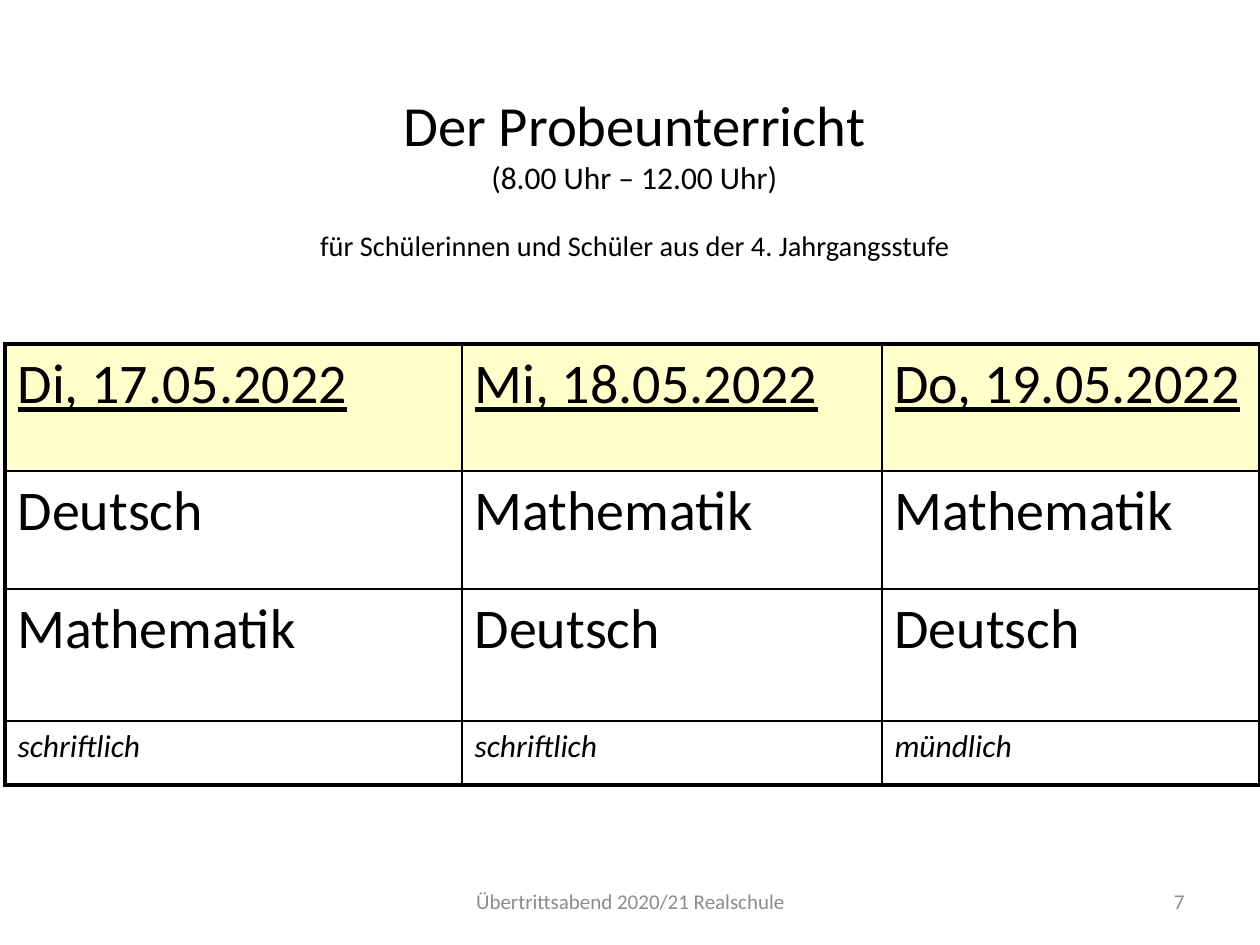
from dataclasses import dataclass

from lxml import etree
from pptx import Presentation
from pptx.dml.color import RGBColor
from pptx.enum.text import MSO_ANCHOR, MSO_AUTO_SIZE, PP_ALIGN
from pptx.oxml.ns import qn
from pptx.util import Pt

MID = MSO_ANCHOR.MIDDLE
FIXED = MSO_AUTO_SIZE.NONE
CENTER = PP_ALIGN.CENTER
RIGHT = PP_ALIGN.RIGHT
FONT = "Calibri"
BLACK, WHITE, CREAM, GRAY = "000000", "FFFFFF", "FFFFCC", "8C8C8C"
THICK, THIN = 2.25, 1
SCALE = 914400 / 126


@dataclass
class Row:
    cells: tuple[str, ...]
    height: int
    size: int = 32
    fill: str = WHITE
    under: bool = False
    slant: bool = False


@dataclass
class Note:
    text: str
    left: int
    width: int
    align: PP_ALIGN


TITLE = (
    ("Der Probeunterricht", 32.4, 0),
    ("(8.00 Uhr – 12.00 Uhr)", 18, 0),
    ("für Schülerinnen und Schüler aus der 4. Jahrgangsstufe", 16.2, 19),
)
COLS = (457, 420, 378)
ROWS = (
    Row(("Di, 17.05.2022", "Mi, 18.05.2022", "Do, 19.05.2022"), 127,
        fill=CREAM, under=True),
    Row(("Deutsch", "Mathematik", "Mathematik"), 118),
    Row(("Mathematik", "Deutsch", "Deutsch"), 132),
    Row(("schriftlich", "schriftlich", "mündlich"), 64, size=18, slant=True),
)
NOTES = (
    Note("Übertrittsabend 2020/21 Realschule", 431, 399, CENTER),
    Note("7", 903, 294, RIGHT),
)


def px(count: int) -> int:
    return round(count * SCALE)


def color(code: str) -> RGBColor:
    return RGBColor.from_string(code)


def style(para, size: float, code: str = BLACK) -> None:
    for run in para.runs:
        run.font.name = FONT
        run.font.size = Pt(size)
        run.font.color.rgb = color(code)


def paint(fill, code: str) -> None:
    fill.solid()
    fill.fore_color.rgb = color(code)


def border(cell, side: str, width: float) -> None:
    props = cell._tc.get_or_add_tcPr()
    line = etree.SubElement(props, qn(f"a:ln{side}"), w=str(Pt(width)))
    solid = etree.SubElement(line, qn("a:solidFill"))
    etree.SubElement(solid, qn("a:srgbClr"), val=BLACK)


def draw_title(shape) -> None:
    shape.left, shape.top = px(84), px(37)
    shape.width, shape.height = px(1101), px(248)
    paint(shape.fill, WHITE)
    shape.line.color.rgb = color(WHITE)
    shape.line.width = Pt(3)
    frame = shape.text_frame
    frame.text = "\n".join(text for text, _, _ in TITLE)
    frame.auto_size = FIXED
    frame.vertical_anchor = MID
    frame.margin_top, frame.margin_bottom = px(36), px(6)
    for para, (_, size, gap) in zip(frame.paragraphs, TITLE):
        para.alignment = CENTER
        para.space_before = Pt(gap)
        style(para, size)


def draw_cell(cell, text: str, row: Row, sides: dict[str, bool]) -> None:
    for side, outer in sides.items():
        border(cell, side, THICK if outer else THIN)
    paint(cell.fill, row.fill)
    cell.text_frame.text = text
    para = cell.text_frame.paragraphs[0]
    style(para, row.size)
    font = para.runs[0].font
    font.underline, font.italic, font.bold = row.under, row.slant, False


def draw_table(slide) -> None:
    high = sum(row.height for row in ROWS)
    table = slide.shapes.add_table(
        len(ROWS), len(COLS), px(5), px(344), px(sum(COLS)), px(high)).table
    for col, width in zip(table.columns, COLS):
        col.width = px(width)
    for r, row in enumerate(ROWS):
        table.rows[r].height = px(row.height)
        for c, text in enumerate(row.cells):
            sides = {"L": c == 0, "R": c == len(COLS) - 1,
                     "T": r == 0, "B": r == len(ROWS) - 1}
            draw_cell(table.cell(r, c), text, row, sides)


def draw_note(slide, note: Note) -> None:
    box = slide.shapes.add_textbox(
        px(note.left), px(876), px(note.width), px(50))
    frame = box.text_frame
    frame.text = note.text
    frame.word_wrap = True
    frame.vertical_anchor = MID
    para = frame.paragraphs[0]
    para.alignment = note.align
    style(para, 12, GRAY)


def main() -> None:
    deck = Presentation()
    deck.slide_width, deck.slide_height = px(1260), px(945)
    slide = deck.slides.add_slide(deck.slide_layouts[5])
    draw_title(slide.shapes.title)
    draw_table(slide)
    for note in NOTES:
        draw_note(slide, note)
    deck.save("out.pptx")


if __name__ == "__main__":
    main()
